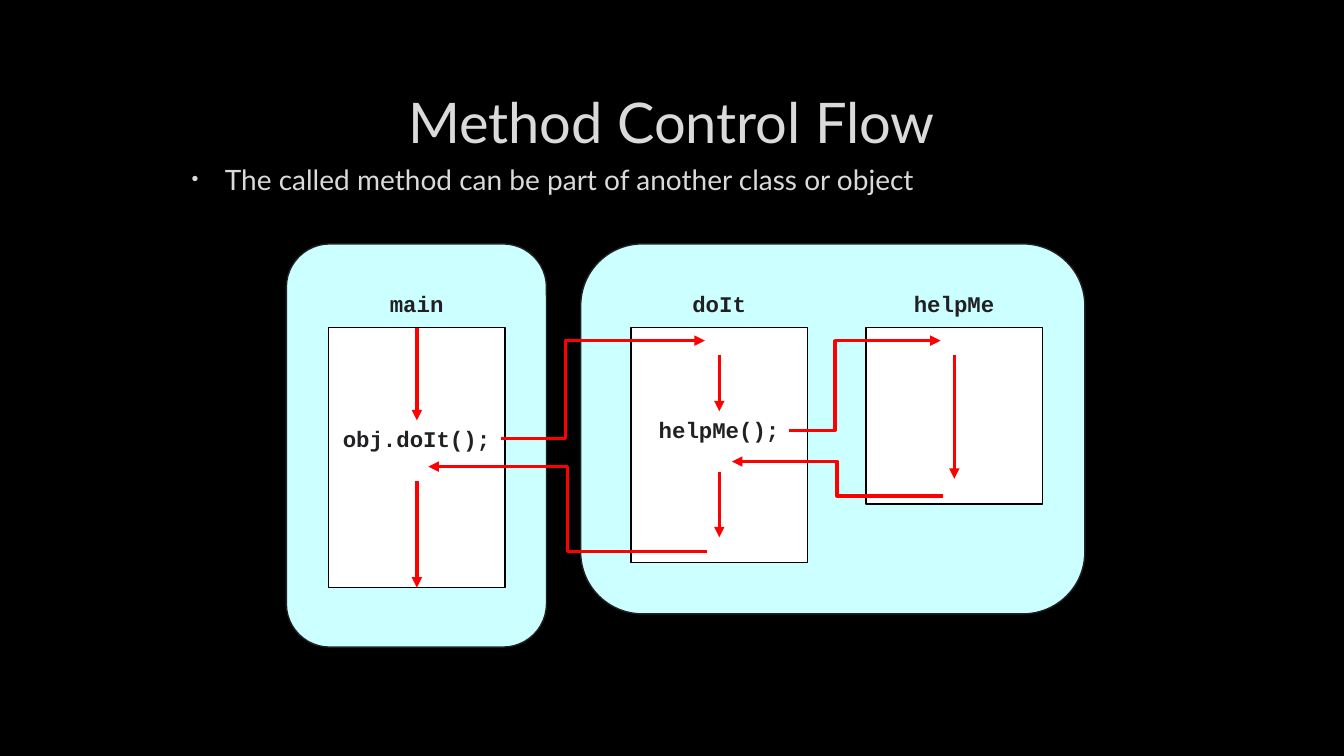
from lxml.etree import SubElement
from pptx import Presentation
from pptx.dml.color import RGBColor
from pptx.enum.shapes import MSO_CONNECTOR, MSO_SHAPE
from pptx.enum.text import MSO_ANCHOR, MSO_AUTO_SIZE, PP_ALIGN
from pptx.oxml.ns import qn
from pptx.util import Inches, Pt

TITLE = "Method Control Flow"
BULLET = "The called method can be part of another class or object"
PALE, INK, CYAN, RED = "DADADA", "212123", "CCFFFF", "FF0000"

# Each class: its panel, then its methods as (name, left, height, call, top of call)
CLASSES = [
    {"panel": (5.76, 2.42, 5, 3.67),
     "methods": [("doIt", 6.26, 2.33, "helpMe();", 4.08),
                 ("helpMe", 8.59, 1.75, None, None)]},
    {"panel": (2.84, 2.42, 2.58, 4),
     "methods": [("main", 3.26, 2.58, "obj.doIt();", 4.17)]},
]
METHOD_TOP, METHOD_WIDTH = 3.25, 1.75
LABEL_TOP, LABEL_HEIGHT = 2.83, 0.37
CHARACTER_WIDTH, LABEL_MARGINS = 0.1333, 0.2

# Downward steps inside a method: (method, start, end)
STEPS = [("main", 3.25, 4.17), ("main", 4.77, 5.83), ("helpMe", 3.52, 4.75),
         ("doIt", 3.52, 4.08), ("doIt", 4.68, 5.33)]
# Calls and returns: (start, end, x of the bend)
JUMPS = [((7.01, 5.47), (4.25, 4.63), 5.63),
         ((7.83, 4.27), (9.33, 3.38), 8.28),
         ((4.97, 4.35), (6.99, 3.38), 5.61),
         ((9.35, 4.92), (7.26, 4.58), 8.3)]


def color(code):
    return RGBColor.from_string(code)


def write(box, text, *, font, size, ink, bold=False, align=None, anchor=None):
    frame = box.text_frame
    frame.vertical_anchor = anchor
    para = frame.paragraphs[0]
    para.alignment = align
    span = para.add_run()
    span.text = text
    span.font.name, span.font.size, span.font.bold = font, Pt(size), bold
    span.font.color.rgb = color(ink)
    return para


def place(box, left, top, width, height):
    box.left, box.top = Inches(left), Inches(top)
    box.width, box.height = Inches(width), Inches(height)


def add_bullet(para):
    para.space_after = Pt(6)
    props = para._p.get_or_add_pPr()
    props.set("marL", str(Inches(0.38)))
    props.set("indent", str(Inches(-0.33)))
    bullet_color = SubElement(props, qn("a:buClr"))
    SubElement(bullet_color, qn("a:srgbClr"), val=PALE)
    SubElement(props, qn("a:buSzPct"), val="70000")
    SubElement(props, qn("a:buChar"), char="•")


def add_panel(group, kind, bounds, fill, line):
    panel = group.shapes.add_shape(kind, *map(Inches, bounds))
    panel.shadow.inherit = False
    panel.fill.solid()
    panel.fill.fore_color.rgb = color(fill)
    panel.line.color.rgb = color(line)
    panel.line.width = Pt(1)
    return panel


def add_label(group, text, center, top):
    width = LABEL_MARGINS + CHARACTER_WIDTH * len(text)
    box = group.shapes.add_textbox(Inches(center - width / 2), Inches(top),
                                   Inches(width), Inches(LABEL_HEIGHT))
    box.text_frame.word_wrap = False
    box.text_frame.auto_size = MSO_AUTO_SIZE.SHAPE_TO_FIT_TEXT
    write(box, text, font="Courier New", size=16, ink=INK, bold=True,
          anchor=MSO_ANCHOR.MIDDLE)


def add_arrow(page, kind, start, end):
    arrow = page.shapes.add_connector(kind, *map(Inches, start + end))
    arrow.line.color.rgb = color(RED)
    arrow.line.width = Pt(2.5)
    SubElement(arrow.line._get_or_add_ln(), qn("a:tailEnd"), type="triangle")
    SubElement(arrow._element.spPr, qn("a:effectLst"))
    return arrow


def set_bend(arrow, share):
    """Put the bend at this share of the way from start to end."""
    geometry = arrow._element.spPr.find(qn("a:prstGeom"))
    values = geometry.find(qn("a:avLst"))
    if values is None:
        values = SubElement(geometry, qn("a:avLst"))
    SubElement(values, qn("a:gd"), name="adj1", fmla=f"val {round(share * 100000)}")


def main():
    deck = Presentation()
    deck.slide_width, deck.slide_height = Inches(13.33), Inches(7.5)
    page = deck.slides.add_slide(deck.slide_layouts[1])
    page.background.fill.solid()
    page.background.fill.fore_color.rgb = color("000000")

    title, body = page.placeholders
    place(title, 1, 0.67, 11.32, 1.06)
    write(title, TITLE, font="Lato", size=40, ink=PALE,
          align=PP_ALIGN.CENTER, anchor=MSO_ANCHOR.MIDDLE)
    place(body, 1.75, 1.56, 9.08, 0.86)
    add_bullet(write(body, BULLET, font="Lato", size=20, ink=PALE,
                     anchor=MSO_ANCHOR.TOP))

    methods = {}
    for entry in CLASSES:
        group = page.shapes.add_group_shape()
        add_panel(group, MSO_SHAPE.FLOWCHART_ALTERNATE_PROCESS,
                  entry["panel"], CYAN, INK)
        for name, left, height, call, call_top in entry["methods"]:
            center = left + METHOD_WIDTH / 2
            bounds = (left, METHOD_TOP, METHOD_WIDTH, height)
            rectangle = add_panel(group, MSO_SHAPE.RECTANGLE, bounds, "FFFFFF", "000000")
            methods[name] = (rectangle, center, METHOD_TOP + height)
            add_label(group, name, center, LABEL_TOP)
            if call:
                add_label(group, call, center, call_top)

    for name, start, end in STEPS:
        rectangle, center, bottom = methods[name]
        arrow = add_arrow(page, MSO_CONNECTOR.STRAIGHT, (center, start), (center, end))
        if start == METHOD_TOP:
            arrow.begin_connect(rectangle, 0)
        if end == bottom:
            arrow.end_connect(rectangle, 2)

    for start, end, bend in JUMPS:
        arrow = add_arrow(page, MSO_CONNECTOR.ELBOW, start, end)
        set_bend(arrow, (bend - start[0]) / (end[0] - start[0]))

    deck.save("out.pptx")


if __name__ == "__main__":
    main()
